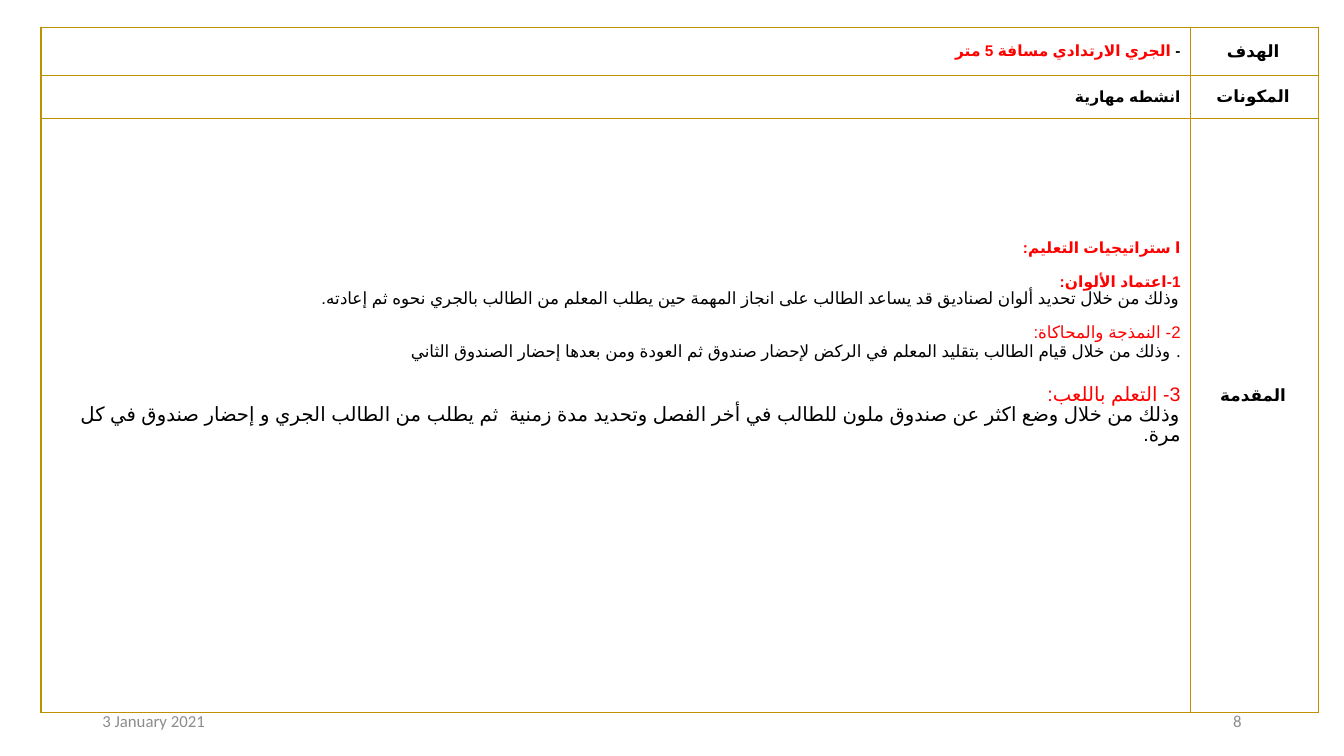
from dataclasses import dataclass

from lxml import etree
from pptx import Presentation
from pptx.dml.color import RGBColor
from pptx.enum.text import MSO_ANCHOR as Anchor, PP_ALIGN as Align
from pptx.oxml.ns import qn
from pptx.util import Pt

BLACK, RED, GOLD, GREY, WHITE = "000000", "FF0000", "BF9000", "8C8C8C", "FFFFFF"


@dataclass
class Line:
    runs: list[tuple[str, str]]  # text and colour
    size: float = 11
    bold: bool = True
    rtl: bool = True
    before: float = 0
    spacing: float = 1


@dataclass
class Row:
    height: float
    label: str
    lines: list[Line]
    lift: float = 0  # extra bottom margin of the content
    label_lift: float = 0


ROWS = [
    Row(34.4, "الهدف", [Line([("- ", BLACK), ("الجري الارتدادي مسافة 5 متر", RED)])]),
    Row(30.8, "المكونات", [Line([("انشطه مهارية", BLACK)])]),
    Row(424.2, "المقدمة", [
        Line([("ا ستراتيجيات التعليم:", RED)]),
        Line([("1-اعتماد الألوان:", RED)], before=12),
        Line([("وذلك من خلال تحديد ألوان لصناديق قد يساعد الطالب على انجاز المهمة "
               "حين يطلب المعلم من الطالب بالجري نحوه ثم إعادته.", BLACK)],
             size=12, bold=False, spacing=0.9),
        Line([("2- النمذجة والمحاكاة:", RED)], size=12, bold=False, before=11),
        Line([("وذلك من خلال قيام الطالب بتقليد المعلم في الركض لإحضار صندوق "
               "ثم العودة ومن بعدها إحضار الصندوق الثاني .", BLACK)],
             size=12, bold=False, rtl=False),
        Line([("3- التعلم باللعب:", RED)], size=14, bold=False, before=15),
        Line([("وذلك من خلال وضع اكثر عن صندوق ملون للطالب في أخر الفصل وتحديد مدة زمنية  "
               "ثم يطلب من الطالب الجري و إحضار صندوق في كل مرة.", BLACK)],
             size=14, bold=False, spacing=0.9),
    ], lift=104, label_lift=28),
]


def rgb(value: str) -> RGBColor:
    return RGBColor.from_string(value)


def add_run(p, text: str, *, size: float, color: str, bold: bool = False,
            arabic: bool = False) -> None:
    r = p.add_run()
    r.text = text
    r.font.name, r.font.size, r.font.bold = "Calibri", Pt(size), bold
    r.font.color.rgb = rgb(color)
    if arabic:
        r_pr = r._r.get_or_add_rPr()
        r_pr.set("lang", "ar-SA")
        etree.SubElement(r_pr, qn("a:cs"), typeface="Arial")


def add_line(tf, line: Line, align: Align, first: bool) -> None:
    p = tf.paragraphs[0] if first else tf.add_paragraph()
    p.alignment = align
    p.line_spacing = line.spacing
    if line.before:
        p.space_before = Pt(line.before)
    if line.rtl:
        p._p.get_or_add_pPr().set("rtl", "1")
    for text, color in line.runs:
        add_run(p, text, size=line.size, color=color, bold=line.bold, arabic=True)


def fill_cell(cell, lines: list[Line], align: Align, lift: float) -> None:
    # Borders come before the fill in the cell properties
    tc_pr = cell._tc.get_or_add_tcPr()
    for side in ("a:lnL", "a:lnR", "a:lnT", "a:lnB"):
        ln = etree.SubElement(tc_pr, qn(side), w=str(Pt(1)))
        solid = etree.SubElement(ln, qn("a:solidFill"))
        etree.SubElement(solid, qn("a:srgbClr"), val=GOLD)
    cell.fill.solid()
    cell.fill.fore_color.rgb = rgb(WHITE)
    cell.vertical_anchor = Anchor.MIDDLE
    cell.margin_left = Pt(5)
    cell.margin_bottom = Pt(3.6 + lift)
    for i, line in enumerate(lines):
        add_line(cell.text_frame, line, align, i == 0)


def add_footer(slide, left: float, text: str, align: Align) -> None:
    tf = slide.shapes.add_textbox(Pt(left), Pt(500.5), Pt(216), Pt(28.8)).text_frame
    tf.word_wrap = True
    tf.vertical_anchor = Anchor.MIDDLE
    p = tf.paragraphs[0]
    p.alignment = align
    add_run(p, text, size=12, color=GREY)


def main() -> None:
    prs = Presentation()
    prs.slide_width, prs.slide_height = Pt(960), Pt(540)
    slide = prs.slides.add_slide(prs.slide_layouts[6])

    # Lesson plan table: content on the left, labels on the right
    widths = (821.2, 91.4)
    height = sum(row.height for row in ROWS)
    table = slide.shapes.add_table(len(ROWS), len(widths), Pt(29.3), Pt(19.4),
                                   Pt(sum(widths)), Pt(height)).table
    table.first_row = table.horz_banding = False
    for column, width in zip(table.columns, widths):
        column.width = Pt(width)
    for i, row in enumerate(ROWS):
        table.rows[i].height = Pt(row.height)
        fill_cell(table.cell(i, 0), row.lines, Align.RIGHT, row.lift)
        label = Line([(row.label, BLACK)], size=12)
        fill_cell(table.cell(i, 1), [label], Align.CENTER, row.label_lift)

    # Date and slide number
    add_footer(slide, 66, "3 January 2021", Align.LEFT)
    add_footer(slide, 678, "8", Align.RIGHT)

    prs.save("out.pptx")


if __name__ == "__main__":
    main()
